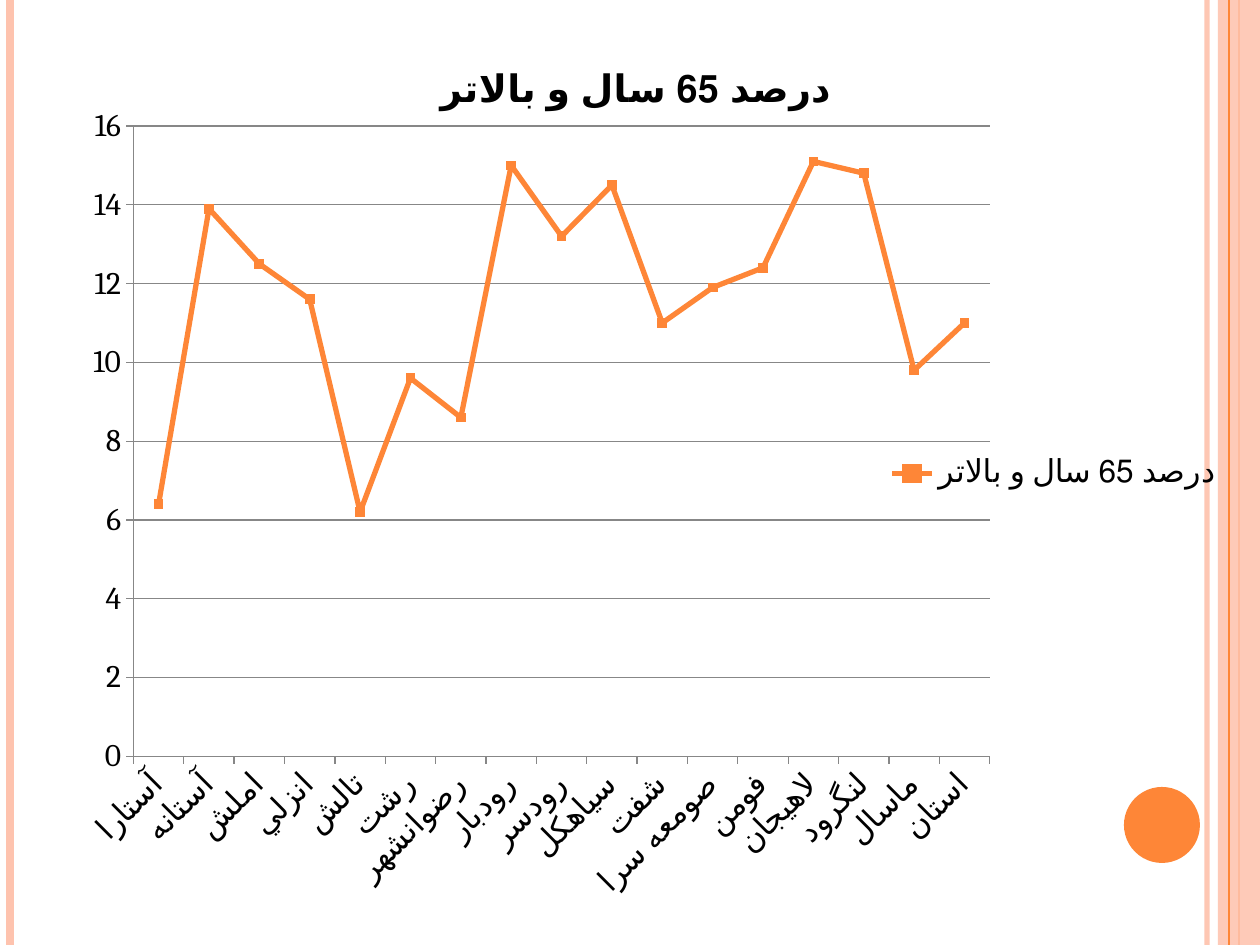
from lxml import etree
from pptx import Presentation
from pptx import util as u
from pptx.chart.data import CategoryChartData
from pptx.dml.color import RGBColor
from pptx.enum import chart as ch, shapes
from pptx.oxml import parse_xml
from pptx.oxml.ns import nsdecls, qn

PX = 914400 / 126
COLORS = {"orange": "FE8637", "peach": "FEC3AE", "axis": "878787", "text": "000000"}
FONT = "Cambria"
SERIES_NAME = "درصد 65 سال و بالاتر"
ELDERLY_SHARE = {
    "آستارا": 6.4, "آستانه": 13.9, "املش": 12.5, "انزلي": 11.6, "تالش": 6.2,
    "رشت": 9.6, "رضوانشهر": 8.6, "رودبار": 15, "رودسر": 13.2, "سياهكل": 14.5,
    "شفت": 11, "صومعه سرا": 11.9, "فومن": 12.4, "لاهيجان": 15.1,
    "لنگرود": 14.8, "ماسال": 9.8, "استان": 11,
}


def emu(px):
    return u.Emu(round(px * PX))


def rgb(color):
    return RGBColor.from_string(COLORS[color])


class SlideBuilder:
    """Holds the current slide and draws styled elements on it."""

    def __init__(self, slide):
        self.slide = slide

    @staticmethod
    def set_alpha(element, percent):
        color = next(element.spPr.iter(qn("a:srgbClr")))
        etree.SubElement(color, qn("a:alpha")).set("val", str(percent * 1000))

    def stripe(self, x, weight, color, alpha=100):
        """Full-height vertical line."""
        line = self.slide.shapes.add_connector(
            shapes.MSO_CONNECTOR.STRAIGHT, emu(x), 0, emu(x), emu(945))
        line.line.color.rgb = rgb(color)
        line.line.width = u.Pt(weight)
        if alpha < 100:
            self.set_alpha(line._element, alpha)
        etree.SubElement(line._element.spPr, qn("a:effectLst"))

    def shape(self, kind, box, color, alpha=100):
        shape = self.slide.shapes.add_shape(kind, *map(emu, box))
        shape.shadow.inherit = False
        shape.fill.solid()
        shape.fill.fore_color.rgb = rgb(color)
        shape.line.fill.background()
        if alpha < 100:
            self.set_alpha(shape._element, alpha)

    @staticmethod
    def style_font(font, size=18, bold=False):
        font.name, font.size, font.bold = FONT, u.Pt(size), bold
        font.color.rgb = rgb("text")

    @staticmethod
    def style_axis(axis):
        axis.format.line.color.rgb = rgb("axis")
        axis.format.line.width = u.Pt(0.75)
        axis.major_tick_mark = ch.XL_TICK_MARK.OUTSIDE
        axis.minor_tick_mark = ch.XL_TICK_MARK.NONE

    @staticmethod
    def place_plot(chart, x, y, w, h):
        """Fix the inner plot area, in fractions of the chart."""
        plot_area = chart._chartSpace.chart.plotArea
        for old in plot_area.findall(qn("c:layout")):
            plot_area.remove(old)
        plot_area.insert(0, parse_xml(
            f'<c:layout {nsdecls("c")}><c:manualLayout><c:layoutTarget val="inner"/>'
            '<c:xMode val="edge"/><c:yMode val="edge"/>'
            f'<c:x val="{x}"/><c:y val="{y}"/><c:w val="{w}"/><c:h val="{h}"/>'
            '</c:manualLayout></c:layout>'))

    def line_chart(self, box, name, values, plot):
        data = CategoryChartData()
        data.categories = list(values)
        data.add_series(name, list(values.values()))
        chart = self.slide.shapes.add_chart(
            ch.XL_CHART_TYPE.LINE_MARKERS, *map(emu, box), data).chart
        self.style_font(chart.font)

        chart.has_title = True
        title = chart.chart_title.text_frame
        title.text = name
        self.style_font(title.paragraphs[0].font, 21.6, True)

        chart.has_legend = True
        chart.legend.position = ch.XL_LEGEND_POSITION.RIGHT
        chart.legend.include_in_layout = False

        self.style_axis(chart.category_axis)
        scale = chart.value_axis
        self.style_axis(scale)
        scale.minimum_scale, scale.maximum_scale, scale.major_unit = 0, 16, 2
        scale.has_major_gridlines = True
        scale.major_gridlines.format.line.color.rgb = rgb("axis")
        scale.major_gridlines.format.line.width = u.Pt(0.75)

        chart.plots[0].vary_by_categories = False
        series = chart.plots[0].series[0]
        series.smooth = False
        series.format.line.color.rgb = rgb("orange")
        series.format.line.width = u.Pt(3)
        series.marker.style = ch.XL_MARKER_STYLE.SQUARE
        series.marker.size = 5
        series.marker.format.fill.solid()
        series.marker.format.fill.fore_color.rgb = rgb("orange")
        series.marker.format.line.color.rgb = rgb("orange")
        self.place_plot(chart, *plot)


def main():
    deck = Presentation()
    deck.slide_width, deck.slide_height = emu(1260), emu(945)
    page = SlideBuilder(deck.slides.add_slide(deck.slide_layouts[6]))

    page.stripe(1207, 3, "peach", 93)
    page.stripe(10, 4.5, "peach")
    page.stripe(1239, 1.5, "orange")
    page.shape(shapes.MSO_SHAPE.RECTANGLE, (1218, 0, 42, 945), "peach", 87)
    page.stripe(1229, 0.75, "orange")
    page.shape(shapes.MSO_SHAPE.OVAL, (1124, 787, 76, 76), "orange")
    page.line_chart((35, 37, 1201, 873), SERIES_NAME, ELDERLY_SHARE,
                    plot=(0.082, 0.102, 0.713, 0.722))
    deck.save("out.pptx")


if __name__ == "__main__":
    main()
